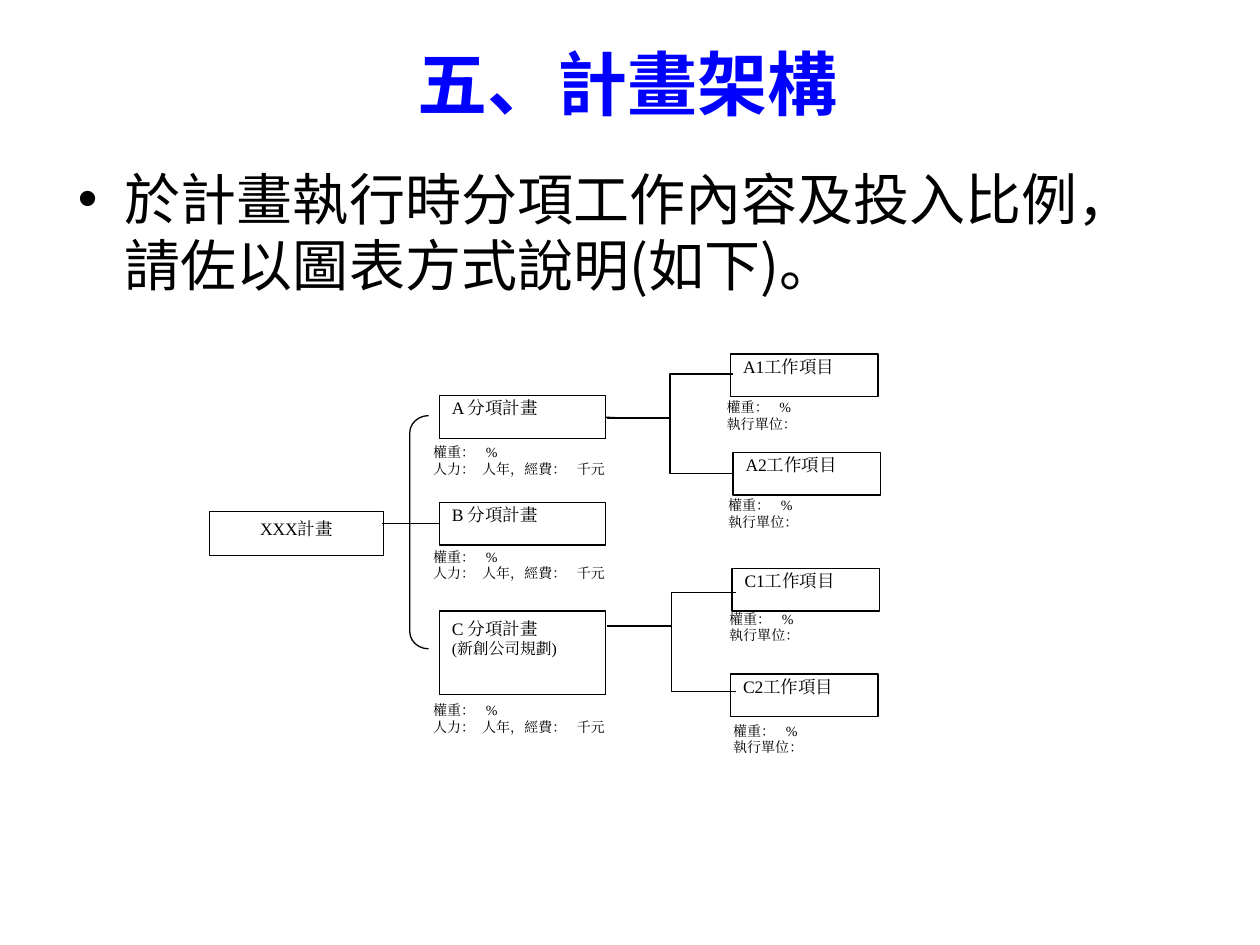
from dataclasses import dataclass
from typing import Any

from lxml import etree
from pptx import Presentation
from pptx import util as u
from pptx.dml.color import RGBColor
from pptx.enum import shapes, text
from pptx.oxml.ns import qn

COLOURS = {"title": "0000FF", "ink": "000000", "paper": "FFFFFF"}
SANS, SERIF = "Noto Sans CJK SC", "Times New Roman"
NORMAL, TIGHT = (0.25, 0.13), (0.25, 0.03)
BUDGET = ["權重：   %", "人力：  人年，經費：   千元"]
UNIT = ["權重：   %", "執行單位："]


def write(shape, lines, sizes=(10,), font=SERIF, colour="ink", bold=False,
          align=text.PP_ALIGN.LEFT, anchor=text.MSO_ANCHOR.TOP, inset=NORMAL):
    frame = shape.text_frame
    frame.word_wrap = True
    frame.vertical_anchor = anchor
    frame.margin_left = frame.margin_right = u.Cm(inset[0])
    frame.margin_top = frame.margin_bottom = u.Cm(inset[1])
    for index, line in enumerate(lines):
        paragraph = frame.add_paragraph() if index else frame.paragraphs[0]
        paragraph.alignment = align
        run = paragraph.add_run()
        run.text = line
        run.font.size = u.Pt(sizes[min(index, len(sizes) - 1)])
        run.font.name = font
        run.font.bold = bold
        run.font.color.rgb = RGBColor.from_string(COLOURS[colour])
        east_asian = etree.SubElement(run._r.get_or_add_rPr(), qn("a:ea"))
        east_asian.set("typeface", font)
    return frame


@dataclass
class Diagram:
    """Draws work breakdown elements on one slide in a shared style."""

    slide: Any
    line_width: float = 0.75

    def outline(self, shape):
        shape.line.color.rgb = RGBColor.from_string(COLOURS["ink"])
        shape.line.width = u.Pt(self.line_width)

    def label(self, lines, *bounds, **style):
        shape = self.slide.shapes.add_textbox(*map(u.Cm, bounds))
        return write(shape, lines, **style)

    def bullet(self, line, *bounds, size, indent):
        paragraph = self.label([line], *bounds, sizes=(size,), font=SANS).paragraphs[0]
        paragraph.line_spacing = u.Pt(38)
        paragraph.space_before = u.Pt(3)
        properties = paragraph._p.get_or_add_pPr()
        properties.set("marL", str(u.Cm(indent)))
        properties.set("indent", str(-u.Cm(indent)))
        etree.SubElement(properties, qn("a:buFont")).set("typeface", "Arial")
        etree.SubElement(properties, qn("a:buChar")).set("char", "•")

    def box(self, lines, *bounds, **style):
        shape = self.slide.shapes.add_shape(
            shapes.MSO_SHAPE.RECTANGLE, *map(u.Cm, bounds))
        shape.shadow.inherit = False
        shape.fill.solid()
        shape.fill.fore_color.rgb = RGBColor.from_string(COLOURS["paper"])
        self.outline(shape)
        write(shape, lines, **style)
        return shape

    def bracket(self, *bounds, curve):
        shape = self.slide.shapes.add_shape(
            shapes.MSO_SHAPE.LEFT_BRACKET, *map(u.Cm, bounds))
        shape.adjustments[0] = curve
        shape.shadow.inherit = False
        shape.fill.background()
        self.outline(shape)

    def connector(self, start, end, kind=shapes.MSO_CONNECTOR.STRAIGHT):
        line = self.slide.shapes.add_connector(kind, *map(u.Cm, (*start, *end)))
        etree.SubElement(line._element.spPr, qn("a:effectLst"))
        self.outline(line)
        return line


def main():
    presentation = Presentation()
    presentation.slide_width, presentation.slide_height = u.Cm(25.4), u.Cm(19.05)
    diagram = Diagram(presentation.slides.add_slide(presentation.slide_layouts[6]))

    diagram.bullet("於計畫執行時分項工作內容及投入比例，請佐以圖表方式說明(如下)。",
                   1.32, 3.2, 22.86, 12.57, size=32, indent=0.95)
    diagram.label(["五、計畫架構"], 1.22, 0.08, 22.86, 3.18, sizes=(40,), font=SANS,
                  colour="title", bold=True, align=text.PP_ALIGN.CENTER,
                  anchor=text.MSO_ANCHOR.MIDDLE)
    diagram.box(["XXX計畫"], 4.22, 10.31, 3.51, 0.89, align=text.PP_ALIGN.CENTER)

    subprojects = {}
    for name, extra, top, height, inset, note_top in (
            ("A", [], 7.98, 0.86, TIGHT, 8.81),
            ("B", [], 10.13, 0.86, TIGHT, 10.92),
            ("C", ["(新創公司規劃)"], 12.32, 1.68, NORMAL, 14.02)):
        subprojects[name] = diagram.box([f"{name} 分項計畫", *extra], 8.86, top, 3.35,
                                        height, sizes=(10, 9), inset=inset)
        diagram.label(BUDGET, 8.48, note_top, 5.21, 1.7, sizes=(8,))

    for name, left, top, note_left, note_top, inset in (
            ("A1", 14.73, 7.14, 14.4, 7.9, NORMAL),
            ("A2", 14.78, 9.12, 14.43, 9.98, TIGHT),
            ("C1", 14.76, 11.46, 14.45, 12.17, NORMAL),
            ("C2", 14.73, 13.59, 14.53, 14.53, TIGHT)):
        diagram.box([f"{name}工作項目"], left, top, 2.97, 0.86, inset=TIGHT)
        diagram.label(UNIT, note_left, note_top, 5.21, 1.7, sizes=(8,), inset=inset)

    diagram.bracket(8.26, 8.38, 0.38, 4.7, curve=0.92)
    trunk = diagram.connector((7.7, 10.56), (8.86, 10.56))
    trunk.end_connect(subprojects["B"], 1)
    stub = diagram.connector((12.21, 8.43), (12.62, 8.43))
    stub.begin_connect(subprojects["A"], 3)
    for start, right, ends in (((12.24, 8.43), 14.78, (7.54, 9.55)),
                               ((12.24, 12.62), 14.83, (11.94, 13.94))):
        for end in ends:
            diagram.connector(start, (right, end), shapes.MSO_CONNECTOR.ELBOW)

    presentation.save("out.pptx")


if __name__ == "__main__":
    main()
